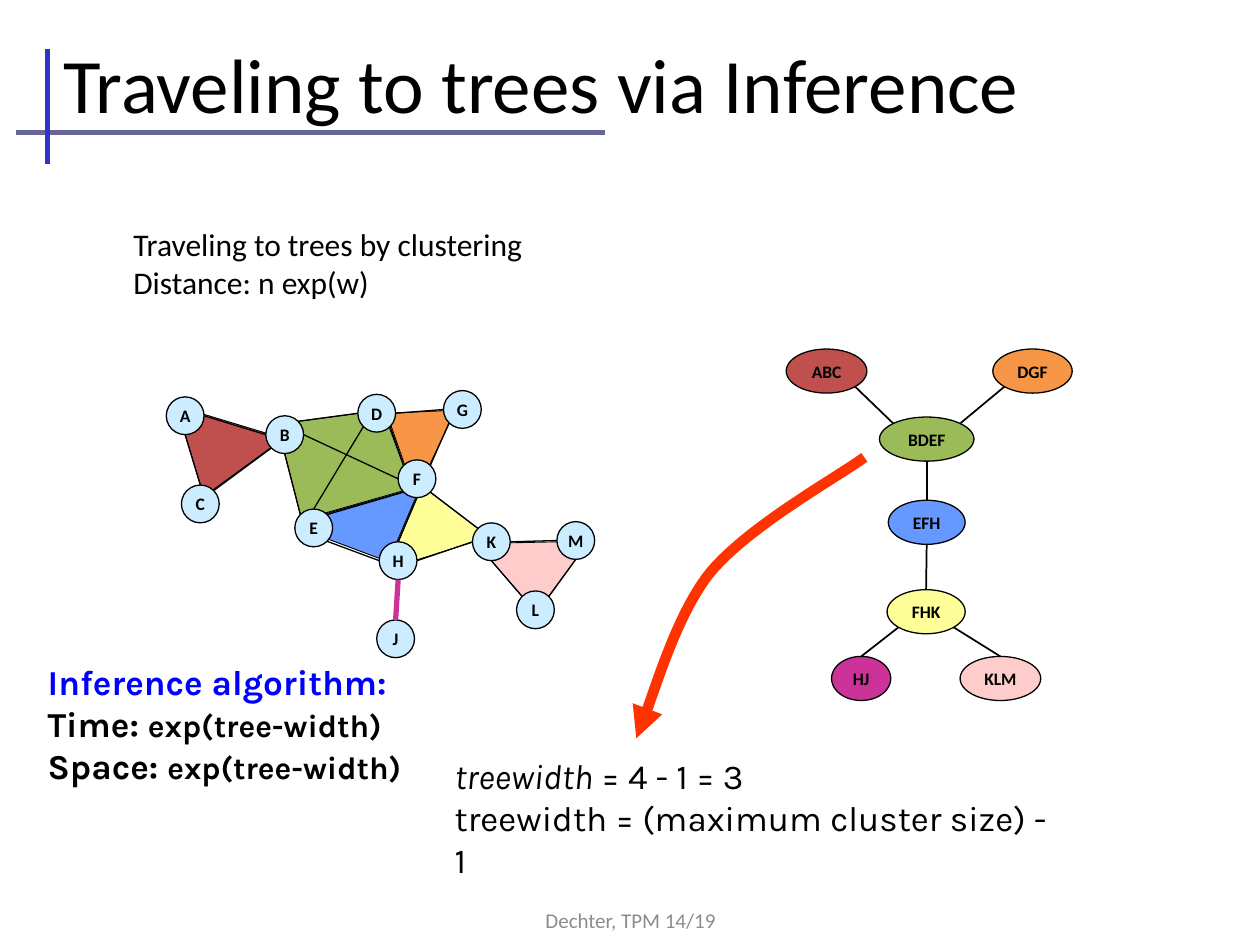
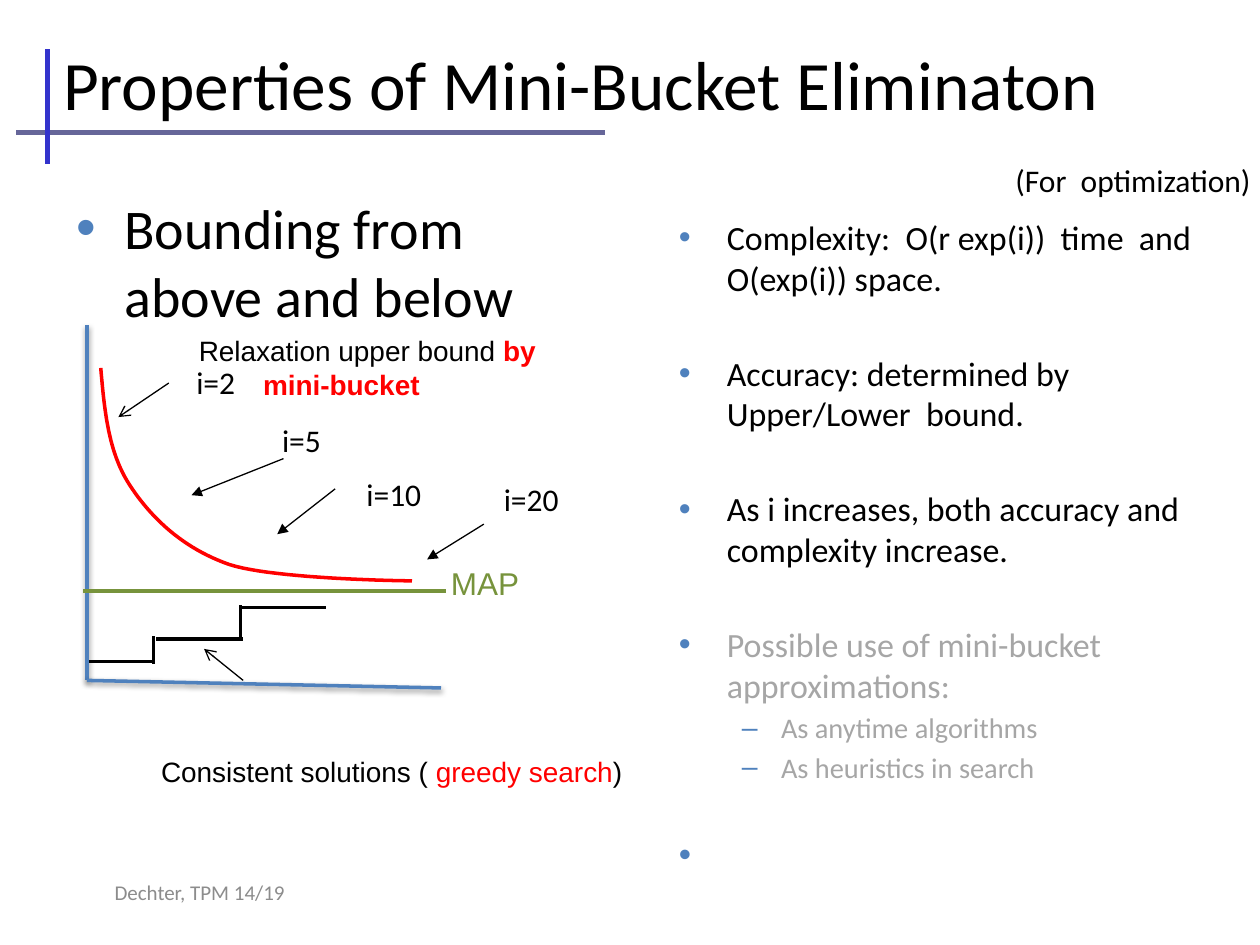
"""Build two slides on tree clustering and mini-bucket elimination."""
from dataclasses import dataclass
from math import cos, radians, sin

from lxml import etree
from pptx import Presentation
from pptx import util as u
from pptx.dml.color import RGBColor
from pptx.enum import shapes, text
from pptx.oxml.ns import qn


@dataclass(frozen=True)
class Theme:
    heading: str = "Calibri"
    accent: str = "Karla"
    plain: str = "Arial"
    black: str = "000000"
    rule: str = "666699"
    bar: str = "3333CC"
    muted: str = "8C8C8C"
    faded: str = "A6A6A6"
    axis: str = "4F81BD"
    node: str = "CCECFF"
    brick: str = "C0504D"
    orange: str = "F79646"
    green: str = "9BBB59"
    blue: str = "6699FF"
    yellow: str = "FFFF99"
    pink: str = "FFCCCC"
    magenta: str = "CC3399"
    arrow: str = "FF3300"
    strong_blue: str = "0000FF"
    red: str = "FF0000"
    map_green: str = "77933C"
    title: float = 44
    long_title: float = 39.6
    lead: float = 32
    large: float = 20
    bullet: float = 19.4
    label: float = 18
    sub_bullet: float = 16.2
    caption: float = 16
    footer: float = 12
    tiny: float = 10


THEME = Theme()
ANGLES = dict(E=0, SE=45, S=90, SW=135, W=180, NW=225, N=270, NE=315)


def add_span(para, words, size=THEME.label, font=THEME.heading, color=THEME.black,
             bold=False, italic=False):
    span = para.add_run()
    span.text = words
    span.font.size = u.Pt(size)
    span.font.name = font
    span.font.color.rgb = RGBColor.from_string(color)
    span.font.bold = bold
    span.font.italic = italic


def add_child(parent, tag, **attributes):
    child = etree.SubElement(parent, qn(tag))
    for name, value in attributes.items():
        child.set(name, str(value))
    return child


def indent(para, left, hanging, bullet=None):
    properties = para._p.get_or_add_pPr()
    properties.set("marL", str(u.Inches(left)))
    properties.set("indent", str(-u.Inches(hanging)))
    if bullet:
        color = add_child(properties, "a:buClr")
        add_child(color, "a:srgbClr", val=THEME.axis)
        add_child(properties, "a:buFont", typeface=THEME.plain)
        add_child(properties, "a:buChar", char=bullet)


def site(ellipse, side):
    angle = radians(ANGLES[side])
    x = ellipse.left + ellipse.width / 2 * (1 + cos(angle))
    y = ellipse.top + ellipse.height / 2 * (1 + sin(angle))
    return u.Emu(x).inches, u.Emu(y).inches


def bezier(start, *curves, steps=24):
    points = [start]
    for first, second, end in curves:
        origin = points[-1]
        for step in range(1, steps + 1):
            t = step / steps
            weights = (1 - t) ** 3, 3 * t * (1 - t) ** 2, 3 * t * t * (1 - t), t ** 3
            knots = origin, first, second, end
            points.append(tuple(sum(w * k[axis] for w, k in zip(weights, knots))
                                for axis in (0, 1)))
    return points


class Board:
    def __init__(self, deck, theme):
        self.deck, self.theme, self.page = deck, theme, None

    def start(self, title, size, footer_at):
        self.page = self.deck.slides.add_slide(self.deck.slide_layouts[5])
        self.line((0.13, 1.05), (4.8, 1.05), self.theme.rule, 3)
        self.line((0.38, 1.3), (0.38, 0.39), self.theme.bar, 3)
        box = self.page.shapes.title
        box.left, box.top, box.width, box.height = map(u.Inches, (0.4, 0.1, 8.92, 1.12))
        frame = box.text_frame
        frame.auto_size = text.MSO_AUTO_SIZE.NONE
        frame.vertical_anchor = text.MSO_ANCHOR.MIDDLE
        frame.paragraphs[0].alignment = text.PP_ALIGN.LEFT
        add_span(frame.paragraphs[0], title, size=size)
        footer = self.text(footer_at, [("Dechter, TPM 14/19", dict(
            size=self.theme.footer, color=self.theme.muted))])
        footer.vertical_anchor = text.MSO_ANCHOR.MIDDLE
        footer.paragraphs[0].alignment = text.PP_ALIGN.CENTER

    def text(self, at, *lines):
        frame = self.page.shapes.add_textbox(*map(u.Inches, at)).text_frame
        frame.word_wrap = True
        for number, spans in enumerate(lines):
            para = frame.add_paragraph() if number else frame.paragraphs[0]
            for words, style in spans:
                add_span(para, words, **style)
        return frame

    def outline(self, shape, color, width, head=None):
        shape.line.color.rgb = RGBColor.from_string(color)
        shape.line.width = u.Pt(width)
        if head:
            add_child(shape.element.spPr.find(qn("a:ln")), "a:tailEnd", type=head)

    def line(self, start, end, color=THEME.black, width=0.75, head=None, shadow=False):
        line = self.page.shapes.add_connector(
            shapes.MSO_CONNECTOR.STRAIGHT, *map(u.Inches, (*start, *end)))
        self.outline(line, color, width, head)
        effects = add_child(line.element.spPr, "a:effectLst")
        if shadow:
            outer = add_child(effects, "a:outerShdw", blurRad=u.Pt(3.1), dist=u.Pt(1.6),
                              dir=90 * 60000, rotWithShape=0)
            shade = add_child(outer, "a:srgbClr", val=self.theme.black)
            add_child(shade, "a:alpha", val=38000)

    def ellipse(self, at, label, fill, wrap=False):
        ellipse = self.page.shapes.add_shape(shapes.MSO_SHAPE.OVAL, *map(u.Inches, at))
        ellipse.shadow.inherit = False
        ellipse.fill.solid()
        ellipse.fill.fore_color.rgb = RGBColor.from_string(fill)
        self.outline(ellipse, self.theme.black, 0.75)
        frame = ellipse.text_frame
        frame.word_wrap = wrap
        frame.vertical_anchor = text.MSO_ANCHOR.MIDDLE
        frame.paragraphs[0].alignment = text.PP_ALIGN.CENTER
        add_span(frame.paragraphs[0], label, size=self.theme.tiny, bold=True)
        return ellipse

    def path_shape(self, points, color=THEME.black, width=0.5, fill=None, head=None):
        places = [tuple(map(u.Inches, point)) for point in points]
        builder = self.page.shapes.build_freeform(*places[0])
        builder.add_line_segments(places[1:], close=fill is not None)
        shape = builder.convert_to_shape()
        shape.shadow.inherit = False
        if fill:
            shape.fill.solid()
            shape.fill.fore_color.rgb = RGBColor.from_string(fill)
        else:
            shape.fill.background()
        self.outline(shape, color, width, head)

    def edges(self, ellipses, links, width):
        for link in links:
            first, leaving, second, entering = link.split()
            self.line(site(ellipses[first], leaving), site(ellipses[second], entering),
                      width=width)


def inference_slide(board):
    theme = board.theme
    board.start("Traveling to trees via Inference", theme.title, (3.42, 7.1, 3.17, 0.4))

    cliques = (
        (theme.pink, [(3.89, 4.44), (4.22, 4.82), (4.35, 4.74), (4.59, 4.41),
                      (4.43, 4.3), (3.97, 4.31)]),
        (theme.yellow, [(3.29, 4.45), (3.86, 4.27), (3.8, 4.2), (3.38, 3.88),
                        (3.31, 3.94), (3.13, 4.38)]),
        (theme.blue, [(2.58, 4.27), (3.06, 4.45), (3.15, 4.3), (3.32, 3.9),
                      (3.21, 3.9), (2.54, 4.09)]),
        (theme.orange, [(3.09, 3.34), (3.25, 3.8), (3.41, 3.69), (3.59, 3.31),
                        (3.53, 3.26), (3.07, 3.28)]),
        (theme.green, [(2.24, 3.53), (2.4, 4.15), (2.59, 4.07), (3.22, 3.89),
                       (3.2, 3.69), (3.07, 3.34), (2.85, 3.28), (2.33, 3.35)]),
        (theme.brick, [(1.59, 3.28), (2.25, 3.48), (1.62, 3.94), (1.4, 3.23)]),
    )
    for fill, points in cliques:
        board.path_shape(points, fill=fill)

    places = dict(A=(1.32, 3.15), B=(2.11, 3.3), C=(1.44, 3.85), D=(2.84, 3.13),
                  E=(2.34, 4.04), F=(3.16, 3.65), G=(3.52, 3.1), H=(3.01, 4.3),
                  J=(2.99, 4.92), K=(3.75, 4.15), L=(4.1, 4.69), M=(4.42, 4.14))
    nodes = {name: board.ellipse((*place, 0.3, 0.3), name, theme.node)
             for name, place in places.items()}
    board.edges(nodes, (
        "H E K W", "F S H N", "F SE K NW", "L NW K S", "E SE H W", "B SW C NE",
        "B NE D W", "A S C N", "F NW D SE", "F NE G SW", "E N D SW", "B S E NW",
        "M S L NE", "B E F W", "M W K E", "F SW E NE", "A E B W", "G W D E"), 0.75)
    board.line(site(nodes["H"], "S"), site(nodes["J"], "N"), theme.magenta, 3)

    clusters = {}
    for name, left, top, width, fill in (
            ("ABC", 6.24, 2.77, 0.64, theme.brick), ("BDEF", 6.98, 3.31, 0.75, theme.green),
            ("DGF", 7.88, 2.77, 0.63, theme.orange), ("EFH", 7.05, 3.97, 0.61, theme.blue),
            ("FHK", 7.04, 4.68, 0.62, theme.yellow), ("HJ", 6.6, 5.21, 0.47, theme.magenta),
            ("KLM", 7.62, 5.21, 0.64, theme.pink)):
        clusters[name] = board.ellipse((left, top, width, 0.35), name, fill, name == "HJ")
    board.edges(clusters, ("ABC SE BDEF NW", "DGF SW BDEF NE", "BDEF S EFH N",
                           "EFH S FHK N", "FHK SW HJ N", "FHK SE KLM N"), 1)

    large = dict(size=theme.large, font=theme.accent)
    strong = dict(large, bold=True)
    cost = ("exp(tree-width)", dict(strong, size=theme.label))
    board.text((3.51, 5.94, 5.01, 0.77),
               [("treewidth", dict(large, italic=True)), (" = 4 - 1 = 3", large)],
               [("treewidth = (maximum cluster size) - 1", large)])
    board.path_shape(bezier((6.86, 3.63), ((6.66, 3.78), (5.95, 4.17), (5.64, 4.54)),
                            ((5.34, 4.91), (5.17, 5.59), (5.05, 5.86))),
                     theme.arrow, 6, head="triangle")
    board.text((0.28, 5.19, 3.23, 1.1),
               [("Inference algorithm:", dict(strong, color=theme.strong_blue))],
               [("Time: ", strong), cost], [("Space: ", strong), cost])
    board.text((0.96, 1.74, 3.32, 0.71), [("Traveling to trees by clustering", {})],
               [("Distance: n exp(w)", {})])


def mini_bucket_slide(board):
    theme = board.theme
    board.start("Properties of Mini-Bucket Eliminaton", theme.long_title,
                (0, 6.83, 3.17, 0.5))
    lead = board.text((0.51, 1.49, 4.42, 5),
                      [("Bounding from above and below", dict(size=theme.lead))])
    indent(lead.paragraphs[0], 0.38, 0.38, "•")

    main = dict(size=theme.bullet)
    faded = dict(main, color=theme.faded)
    sub = dict(faded, size=theme.sub_bullet)
    points = (
        ("Complexity:  O(r exp(i))  time  and O(exp(i)) space.", main, 0, "•"),
        ("Accuracy: determined by Upper/Lower  bound.", main, 31, "•"),
        ("As i increases, both accuracy and complexity increase.", main, 31, "•"),
        ("Possible use of mini-bucket approximations:", faded, 31, "•"),
        ("As anytime algorithms", sub, 3, "–"),
        ("As heuristics in search", sub, 3, "–"),
        ("•", dict(size=theme.large, font=theme.plain, color=theme.axis), 27.5, None),
    )
    body = board.text((5.29, 1.67, 4.42, 5), *[[point[:2]] for point in points])
    for para, (_, _, gap, bullet) in zip(body.paragraphs, points):
        para.space_before = u.Pt(gap)
        if bullet:
            indent(para, *((0.81, 0.31) if bullet == "–" else (0.38, 0.38)), bullet)

    origin = (0.69, 5.4)
    board.line((0.69, 2.58), origin, theme.axis, 2, shadow=True)
    board.line((3.5, 5.46), origin, theme.axis, 2, shadow=True)
    board.path_shape(bezier((0.8, 2.92), ((0.83, 3.26), (0.86, 3.59), (1.03, 3.85)),
                            ((1.2, 4.11), (1.45, 4.35), (1.82, 4.48)),
                            ((2.19, 4.6), (3.27, 4.61), (3.27, 4.61))), theme.red, 2)
    for start, end in (((0.71, 5.25), (1.22, 5.25)), ((1.22, 5.27), (1.22, 5.05)),
                       ((1.24, 5.07), (1.93, 5.07)), ((1.91, 5.06), (1.91, 4.8)),
                       ((1.91, 4.82), (2.59, 4.82))):
        board.line(start, end, width=2)
    board.line((0.66, 4.69), (3.54, 4.69), theme.map_green, 2)
    for start, end, head in (((1.34, 3.04), (0.94, 3.31), "arrow"),
                             ((1.93, 5.4), (1.62, 5.15), "arrow"),
                             ((2.25, 3.64), (1.52, 3.93), "triangle"),
                             ((2.66, 3.88), (2.2, 4.24), "triangle"),
                             ((3.84, 4.16), (3.39, 4.44), "triangle")):
        board.line(start, end, head=head)

    plain = dict(size=theme.caption, font=theme.plain)
    red = dict(plain, color=theme.red)
    upper = board.text((1.48, 2.6, 3.27, 0.76), [
        ("Relaxation upper bound ", plain), ("by mini-bucket", dict(red, bold=True))])
    lower = board.text((1.18, 5.94, 3.99, 0.38), [
        ("Consistent solutions ( ", plain), ("greedy search", red), (")", plain)])
    for frame in (upper, lower):
        indent(frame.paragraphs[0], 0.51, 0.51)
    board.text((3.48, 4.43, 0.79, 0.48),
               [("MAP", dict(font=theme.plain, color=theme.map_green))])
    for words, left, top, width in (
            ("i=2", 1.46, 2.83, 0.56), ("i=5", 2.14, 3.29, 0.56), ("i=10", 2.81, 3.72, 0.7),
            ("i=20", 3.9, 3.76, 0.7), ("(For  optimization)", 7.96, 1.23, 2.09)):
        board.text((left, top, width, 0.4), [(words, {})])


def main():
    deck = Presentation()
    deck.slide_width, deck.slide_height = u.Inches(10), u.Inches(7.5)
    board = Board(deck, THEME)
    inference_slide(board)
    mini_bucket_slide(board)
    deck.save("out.pptx")


if __name__ == "__main__":
    main()
